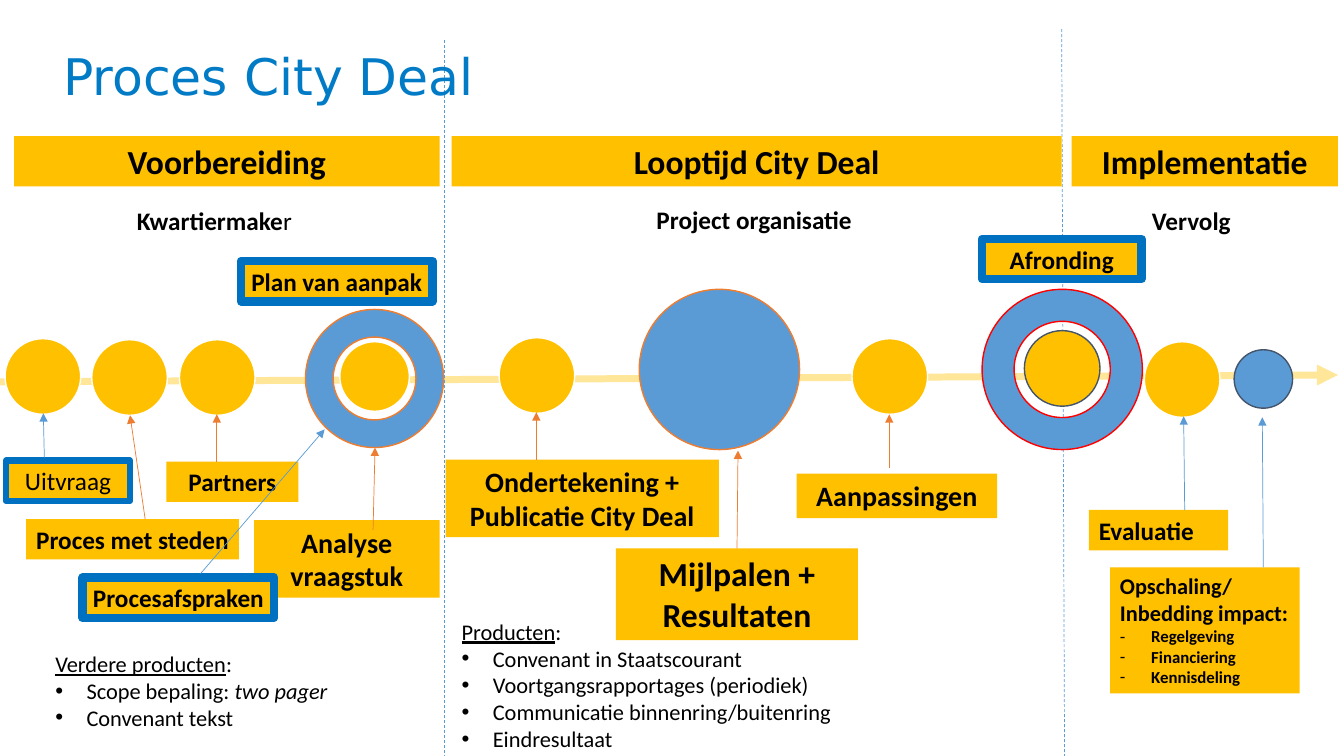
import pptx
import pptx.dml.color
import pptx.enum.dml
import pptx.enum.shapes
import pptx.enum.text
import pptx.oxml.ns
import pptx.util
from lxml import etree

COLOURS = {
    "amber": "FFC000", "pale": "FFE699", "sky": "5B9BD5", "border": "0070C0",
    "orange": "ED7D31", "red": "FF0000", "slate": "44546A",
    "white": "FFFFFF", "black": "000000", "title": "017BC6",
}
CELL = pptx.util.Inches(0.1)  # the slide is a grid of 133.3 columns by 75 rows
KINDS = pptx.enum.shapes.MSO_SHAPE
CENTER = pptx.enum.text.PP_ALIGN.CENTER
LEFT = pptx.enum.text.PP_ALIGN.LEFT
colour = {name: pptx.dml.color.RGBColor.from_string(code) for name, code in COLOURS.items()}

deck = pptx.Presentation()
deck.slide_width = pptx.util.Inches(13.33)
deck.slide_height = pptx.util.Inches(7.5)
page = deck.slides.add_slide(deck.slide_layouts[6])


def write(box, paragraphs, size, bold=True, align=LEFT, wrap=True, anchor="TOP",
          font="Calibri", ink="black"):
    """Fill a box; a paragraph is (bullet, size or None, [(text, style), ...])."""
    frame = box.text_frame
    frame.word_wrap = wrap
    frame.vertical_anchor = pptx.enum.text.MSO_ANCHOR[anchor]
    for index, (bullet, own_size, runs) in enumerate(paragraphs):
        para = frame.paragraphs[0] if index == 0 else frame.add_paragraph()
        para.alignment = align
        if bullet:
            properties = para._p.get_or_add_pPr()
            indent = int(3.1 * CELL)
            properties.set("marL", str(indent))
            properties.set("indent", str(-indent))
            etree.SubElement(properties, pptx.oxml.ns.qn("a:buFont")).set("typeface", "Arial")
            etree.SubElement(properties, pptx.oxml.ns.qn("a:buChar")).set("char", bullet)
        para.font.name = font
        para.font.size = pptx.util.Pt(own_size or size)
        para.font.bold = bold
        para.font.color.rgb = colour[ink]
        for text, style in runs:
            span = para.add_run()
            span.text = text
            if style:
                setattr(span.font, style, style != "bold")


def draw_line(start, end, ink, width, arrow=True):
    line = page.shapes.add_connector(
        pptx.enum.shapes.MSO_CONNECTOR.STRAIGHT, *[int(n * CELL) for n in start + end])
    line.line.color.rgb = colour[ink]
    line.line.width = pptx.util.Pt(width)
    if arrow:
        tail = etree.SubElement(line.line._get_or_add_ln(), pptx.oxml.ns.qn("a:tailEnd"))
        tail.set("type", "triangle")
    etree.SubElement(line._element.spPr, pptx.oxml.ns.qn("a:effectLst"))
    return line


# Timeline and the borders between the phases
draw_line((-2.5, 37.9), (132.7, 37.2), "pale", 5)
for start, end in [((44.1, 4), (44.1, 75)), ((105.3, 2.9), (105.6, 78.7))]:
    divider = draw_line(start, end, "sky", 0.5, arrow=False)
    divider.line.dash_style = pptx.enum.dml.MSO_LINE.DASH

# Phase headers and step labels: lines, place, text size, border width, alignment, wrap
labels = [
    ("Voorbereiding", (1.4, 13.5, 42.2, 5), 24, 0, CENTER, True),
    ("Looptijd City Deal", (44.8, 13.5, 60.5, 5), 24, 0, CENTER, True),
    ("Implementatie", (106.3, 13.5, 26.4, 5), 24, 0, CENTER, True),
    ("Uitvraag", (0.6, 45.7, 12.3, 4), 18, 4.5, CENTER, False),
    ("Proces met steden", (2.6, 51.5, 21.1, 4), 18, 0, CENTER, False),
    ("Partners", (16.5, 45.8, 13.1, 4), 18, 0, CENTER, False),
    ("Plan van aanpak", (23.9, 25.9, 19, 4), 18, 6, CENTER, False),
    ("Analyse vraagstuk", (25.2, 51.6, 18.4, 7.7), 20, 0, CENTER, True),
    ("Procesafspraken", (8.2, 57.3, 19, 4), 18, 6, CENTER, False),
    ("Ondertekening + Publicatie City Deal", (44.2, 45.6, 27.1, 7.7), 20, 0, CENTER, True),
    ("Mijlpalen +\nResultaten", (61.1, 54.4, 24, 9.1), 24, 0, CENTER, True),
    ("Aanpassingen", (79, 47, 19.9, 4.4), 20, 0, CENTER, True),
    ("Afronding", (97.4, 23.7, 15.8, 4), 18, 6, CENTER, False),
    ("Evaluatie", (108, 50.6, 13.8, 4), 18, 0, LEFT, True),
    ("Opschaling/\nInbedding impact:\n- Regelgeving\n- Financiering\n- Kennisdeling",
     (110.1, 56.3, 18.8, 12.5), 16, 0, LEFT, False),
]
boxes = {}
for words, place, size, border, align, wrap in labels:
    box = page.shapes.add_shape(KINDS.RECTANGLE, *[int(n * CELL) for n in place])
    box.shadow.inherit = False
    box.fill.solid()
    box.fill.fore_color.rgb = colour["amber"]
    if border:
        box.line.color.rgb = colour["border"]
        box.line.width = pptx.util.Pt(border)
    else:
        box.line.fill.background()
    paragraphs = []
    for text in words.split("\n"):
        listed = text.startswith("- ")
        paragraphs.append(("-" if listed else None, 12 if listed else None,
                           [(text.removeprefix("- "), None)]))
    write(box, paragraphs, size, words != "Uitvraag", align, wrap)
    boxes[words.split()[0]] = box

# Milestones on the timeline: kind, left, top, diameter, fill, outline
milestones = [
    (KINDS.DONUT, 30.3, 30.7, 13.7, "sky", "orange"),
    (KINDS.DONUT, 97.4, 28.7, 15.9, "sky", "red"),
    (KINDS.OVAL, 0.5, 33.6, 7.5, "amber", "white"),
    (KINDS.OVAL, 9.1, 33.7, 7.5, "amber", "white"),
    (KINDS.OVAL, 17.8, 33.7, 7.5, "amber", "white"),
    (KINDS.OVAL, 33.7, 33.9, 6.9, "amber", "white"),
    (KINDS.OVAL, 49.5, 33.5, 7.5, "amber", "white"),
    (KINDS.OVAL, 63.4, 28.7, 15.9, "sky", "orange"),
    (KINDS.OVAL, 84.5, 33.6, 7.5, "amber", "white"),
    (KINDS.OVAL, 101.6, 32.8, 7.5, "amber", "slate"),
    (KINDS.OVAL, 113.5, 33.9, 7.5, "amber", "white"),
    (KINDS.OVAL, 122.4, 34.7, 5.8, "sky", "slate"),
]
for kind, left, top, diameter, fill, outline in milestones:
    circle = page.shapes.add_shape(kind, *[int(n * CELL) for n in (left, top, diameter, diameter)])
    if kind == KINDS.DONUT:
        circle.adjustments[0] = 0.2
    circle.shadow.inherit = False
    circle.fill.solid()
    circle.fill.fore_color.rgb = colour[fill]
    circle.line.color.rgb = colour[outline]
    circle.line.width = pptx.util.Pt(1)

# Arrows from the labels up to the milestones
arrows = [
    ((4.4, 45.4), (4.3, 41), "sky"),
    ((14.4, 51.5), (12.9, 41.2), "orange"),
    ((21.5, 45.8), (21.5, 41.1), "orange"),
    ((19.9, 56.9), (32.2, 42.6), "sky"),
    ((37, 52.6), (37.2, 44.4), "orange"),
    ((53.2, 45.6), (53.2, 40.9), "orange"),
    ((88.2, 46.4), (88.2, 41.1), "orange"),
    ((117.5, 50.6), (117.4, 41.3), "sky"),
    ((125.3, 56.3), (125.2, 41.4), "sky"),
]
for start, end, ink in arrows:
    draw_line(start, end, ink, 0.5)
draw_line((73.1, 54.4), (73.2, 44.7), "orange", 0.5).begin_connect(boxes["Mijlpalen"], 0)

# Free text: place, paragraphs, formatting
texts = [
    ((5.3, 4.7, 119.5, 10.4), [(None, None, [("Proces City Deal", None)])],
     dict(size=36, bold=False, font="DejaVu Sans", ink="title")),
    ((12.6, 19.9, 25.7, 4), [(None, None, [("Kwartiermake", None), ("r", "bold")])],
     dict(size=18)),
    ((44.8, 19.8, 60, 7.1), [(None, None, [("Project organisatie", None)])],
     dict(size=18, align=CENTER)),
    ((107.9, 19.9, 20.5, 7.1), [(None, None, [("Vervolg", None)])],
     dict(size=18, align=CENTER)),
    ((4.5, 64, 41.9, 18.2),
     [(None, None, [("Verdere producten", "underline"), (":", None)]),
      ("•", None, [("Scope bepaling: ", None), ("two pager", "italic")]),
      ("•", None, [("Convenant tekst", None)])],
     dict(size=16, bold=False)),
    ((44.8, 60.8, 53.1, 23.6),
     [(None, None, [("Producten", "underline"), (":", None)])]
     + [("•", None, [(product, None)]) for product in (
         "Convenant in Staatscourant", "Voortgangsrapportages (periodiek)",
         "Communicatie binnenring/buitenring", "Eindresultaat")],
     dict(size=16, bold=False)),
]
for place, paragraphs, formatting in texts:
    box = page.shapes.add_textbox(*[int(n * CELL) for n in place])
    write(box, paragraphs, **formatting)
    if formatting["size"] == 36:
        box.text_frame.paragraphs[0].line_spacing = 0.9

deck.save("out.pptx")
